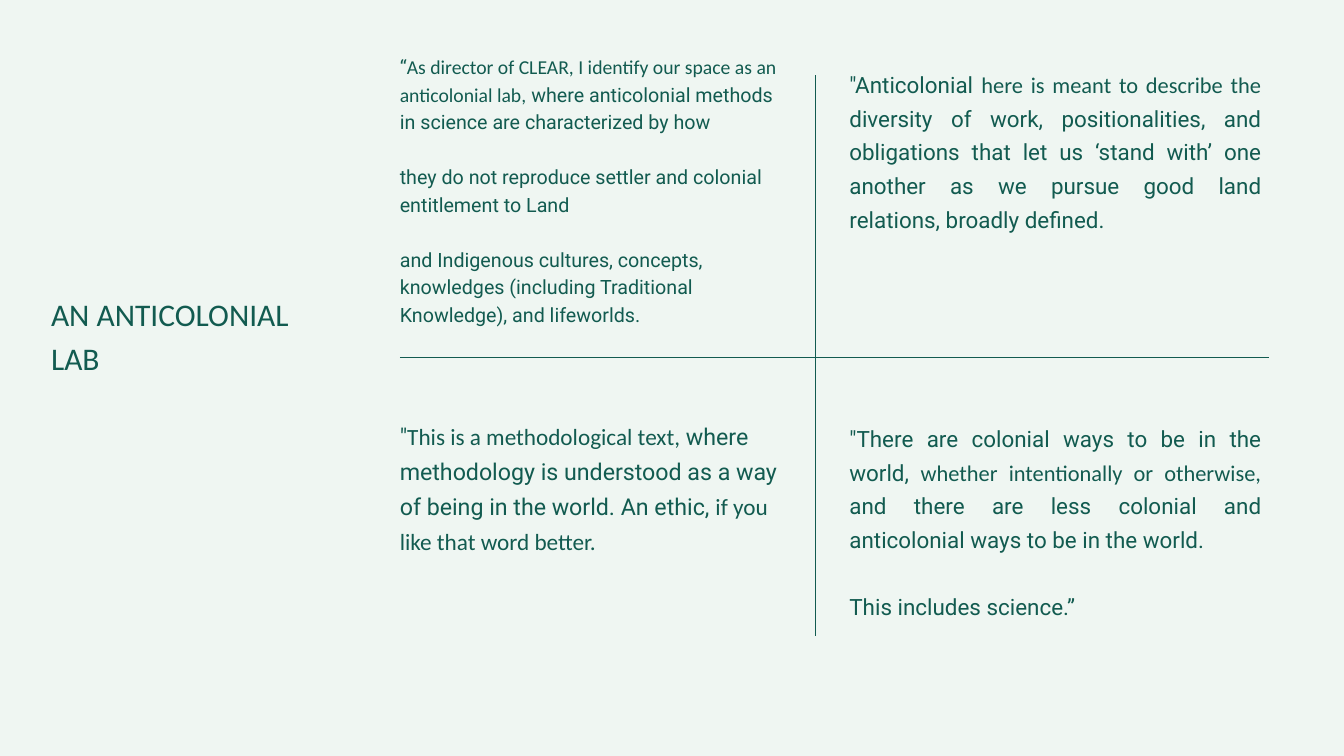
import pptx
import pptx.dml.color
import pptx.enum.shapes
import pptx.enum.text
import pptx.oxml.ns
import pptx.util
from lxml import etree

Inches = pptx.util.Inches
Pt = pptx.util.Pt
Align = pptx.enum.text.PP_ALIGN

SANS, HUMAN = "Roboto", "Calibri"


def color(text):
    return pptx.dml.color.RGBColor.from_string(text)


class Page:
    ink = "125B50"
    back = "EFF6F2"

    def __init__(self, deck):
        self.slide = deck.slides.add_slide(deck.slide_layouts[5])
        fill = self.slide.background.fill
        fill.solid()
        fill.fore_color.rgb = color(self.back)

    def text(self, shape, paras, size, lead, align=Align.LEFT):
        """Fill a shape with paragraphs of (text, font) runs, one line apart."""
        frame = shape.text_frame
        frame.word_wrap = True
        frame.auto_size = pptx.enum.text.MSO_AUTO_SIZE.NONE
        frame.vertical_anchor = pptx.enum.text.MSO_ANCHOR.TOP
        frame.margin_left = frame.margin_right = 0
        frame.margin_top = frame.margin_bottom = 0
        for i, runs in enumerate(paras):
            para = frame.add_paragraph() if i else frame.paragraphs[0]
            para.alignment = align
            para.line_spacing = Pt(lead)
            para.space_before = Pt(lead if i else 0)
            for words, font in runs:
                run = para.add_run()
                run.text = words
                run.font.name = font
                run.font.size = Pt(size)
                run.font.color.rgb = color(self.ink)

    def title(self, words, box, size, lead):
        shape = self.slide.shapes.title
        shape.left, shape.top, shape.width, shape.height = map(Inches, box)
        self.text(shape, [[(words, HUMAN)]], size, lead)

    def quote(self, box, paras, size, lead, align=Align.LEFT):
        shape = self.slide.shapes.add_textbox(*map(Inches, box))
        self.text(shape, paras, size, lead, align)

    def rule(self, *ends):
        line = self.slide.shapes.add_connector(
            pptx.enum.shapes.MSO_CONNECTOR.STRAIGHT, *map(Inches, ends))
        line.line.color.rgb = color(self.ink)
        line.line.width = Pt(0.75)
        etree.SubElement(line._element.spPr, pptx.oxml.ns.qn("a:effectLst"))


def main():
    deck = pptx.Presentation()
    deck.slide_width, deck.slide_height = Inches(20), Inches(11.25)
    page = Page(deck)
    left, right = 5.95, 12.64

    page.title("AN ANTICOLONIAL LAB", (0.76, 4.3, 4.06, 2.04), 33.7, 47.2)

    page.quote((left, 0.76, 5.67, 4.87), [
        [("“", SANS),
         ("As director of CLEAR, I identify our space as an anticolonial lab,",
          HUMAN),
         (" where anticolonial methods in science are characterized by how",
          SANS)],
        [("they do not reproduce settler and colonial entitlement to Land",
          SANS)],
        [("and Indigenous cultures, concepts, knowledges (including "
          "Traditional Knowledge), and lifeworlds.", SANS)],
    ], 21.1, 29.5)

    page.quote((right, 0.96, 6.13, 3.57), [
        [("\"Anticolonial ", SANS),
         ("here is meant to describe the ", HUMAN),
         ("diversity of work, positionalities, and obligations that let us "
          "‘stand with’ one another as we pursue good land relations, "
          "broadly defined.", SANS)],
    ], 24, 36, Align.JUSTIFY)

    page.quote((left, 6.18, 5.67, 3.16), [
        [("\"", SANS),
         ("This is a methodological text,", HUMAN),
         (" where methodology is understood as a way of being in the world. "
          "An ethic, ", SANS),
         ("if you like that word better.", HUMAN)],
    ], 24.9, 37.4)

    page.quote((right, 6.23, 6.13, 4.07), [
        [("\"There are colonial ways to be in the world, ", SANS),
         ("whether intentionally or otherwise, ", HUMAN),
         ("and there are less colonial and anticolonial ways to be in the "
          "world. ", SANS)],
        [("This includes science.”", SANS)],
    ], 24, 36, Align.JUSTIFY)

    page.rule(left, 5.32, 18.88, 5.32)
    page.rule(12.13, 1.12, 12.13, 9.46)
    deck.save("out.pptx")


if __name__ == "__main__":
    main()
